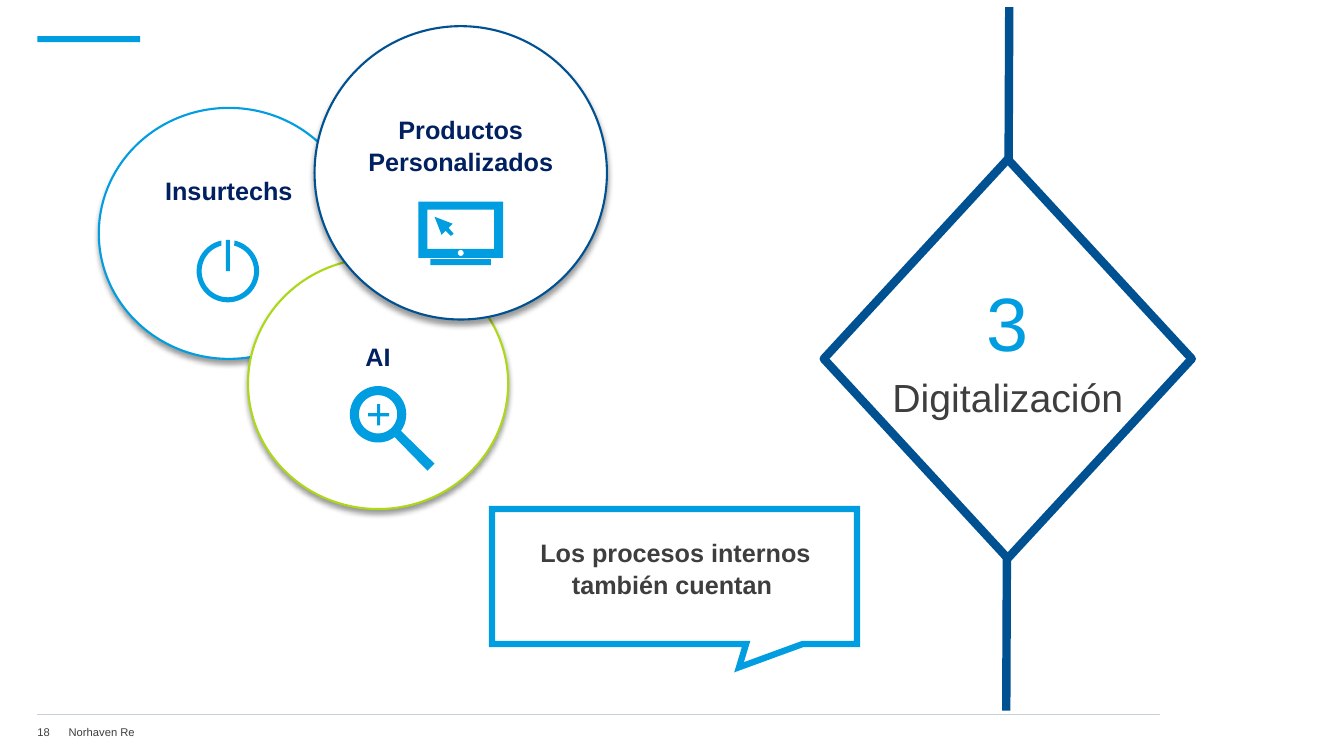
from math import cos, radians, sin

from lxml.etree import SubElement
from pptx import Presentation
from pptx.dml.color import RGBColor
from pptx.enum.shapes import MSO_CONNECTOR, MSO_SHAPE
from pptx.enum.text import MSO_ANCHOR, PP_ALIGN
from pptx.oxml.ns import qn
from pptx.util import Inches, Pt

SKY, NAVY, LIME = "009EE0", "005192", "ACD819"
INK, TEXT, RULE, WHITE = "002060", "3E3E3E", "C6D2D9", "FFFFFF"


def color(value):
    return RGBColor.from_string(value)


def arc(cx, cy, radius, start=0, end=360, steps=48):
    """Points along an arc, in inches; degrees run clockwise from the right."""
    angles = [radians(start + (end - start) * i / steps) for i in range(steps + 1)]
    return [(cx + radius * cos(a), cy + radius * sin(a)) for a in angles]


def rectangle(left, top, right, bottom):
    return [(left, top), (right, top), (right, bottom), (left, bottom)]


class SlideArtist:
    font = "Arial"
    spacing = 1.07

    def __init__(self, slide):
        self.shapes = slide.shapes

    def style(self, shape, fill=None, line=None, width=1.5, join="round"):
        if fill:
            shape.fill.solid()
            shape.fill.fore_color.rgb = color(fill)
        else:
            shape.fill.background()
        if line:
            shape.line.color.rgb = color(line)
            shape.line.width = Pt(width)
            SubElement(shape.line.fill._xPr, qn("a:" + join))
        else:
            shape.line.fill.background()
        shape.shadow.inherit = False
        return shape

    def preset(self, kind, box, **look):
        shape = self.shapes.add_shape(kind, *map(Inches, box))
        return self.style(shape, **look)

    def outline(self, *contours, **look):
        """Freeform made of closed contours; inner ones become holes."""
        builder = None
        for contour in contours:
            first, *rest = [(Inches(x), Inches(y)) for x, y in contour]
            if builder is None:
                builder = self.shapes.build_freeform(*first, scale=1.0)
            else:
                builder.move_to(*first)
            builder.add_line_segments(rest, close=True)
        return self.style(builder.convert_to_shape(), **look)

    def line(self, start, end, stroke, width):
        points = map(Inches, (*start, *end))
        connector = self.shapes.add_connector(MSO_CONNECTOR.STRAIGHT, *points)
        connector.line.color.rgb = color(stroke)
        connector.line.width = Pt(width)
        SubElement(connector._element.spPr, qn("a:effectLst"))

    def set_text(self, shape, paragraphs, insets=(0, 0, 0, 0), align=PP_ALIGN.CENTER,
                 anchor=MSO_ANCHOR.TOP, bold=False):
        """Each paragraph is (text, size, colour)."""
        frame = shape.text_frame
        frame.word_wrap = True
        frame.vertical_anchor = anchor
        (frame.margin_left, frame.margin_top,
         frame.margin_right, frame.margin_bottom) = map(Inches, insets)
        for index, (text, size, ink) in enumerate(paragraphs):
            paragraph = frame.add_paragraph() if index else frame.paragraphs[0]
            paragraph.alignment = align
            paragraph.line_spacing = self.spacing
            if index:
                paragraph.space_before = Pt(3)
            run = paragraph.add_run()
            run.text = text
            run.font.name = self.font
            run.font.size = Pt(size)
            run.font.bold = bold
            run.font.color.rgb = color(ink)

    def label(self, box, paragraphs, **layout):
        self.set_text(self.shapes.add_textbox(*map(Inches, box)), paragraphs, **layout)

    def bubble(self, box, stroke, topic, lift):
        """Shadowed circle whose topic sits above the centre by lift."""
        circle = self.preset(MSO_SHAPE.OVAL, box, fill=WHITE, line=stroke)
        effects = circle._element.spPr.find(qn("a:effectLst"))
        shadow = SubElement(effects, qn("a:outerShdw"), blurRad=str(Pt(4)),
                            dist=str(Pt(3)), dir="5400000", rotWithShape="0")
        black = SubElement(shadow, qn("a:srgbClr"), val="000000")
        SubElement(black, qn("a:alpha"), val="40000")
        self.set_text(circle, [(topic, 18, INK)], bold=True, anchor=MSO_ANCHOR.MIDDLE,
                      insets=(0.05, 0.05, 0.05, 0.05 + 2 * lift))


def main():
    deck = Presentation()
    deck.slide_width, deck.slide_height = Inches(13.33), Inches(7.5)
    artist = SlideArtist(deck.slides.add_slide(deck.slide_layouts[6]))

    # Footer and accent bar
    artist.line((0.37, 7.09), (11.51, 7.09), RULE, 0.75)
    for left, width, text in ((0.37, 0.31, "18"), (0.68, 10.78, "Norhaven Re")):
        artist.label((left, 7.14, width, 0.24), [(text, 8, TEXT)],
                     align=PP_ALIGN.LEFT, anchor=MSO_ANCHOR.MIDDLE)
    artist.preset(MSO_SHAPE.RECTANGLE, (0.37, 0.36, 1.02, 0.06), fill=SKY)

    # Chapter diamond on its vertical line
    artist.line((10.01, 0.07), (9.98, 7.05), NAVY, 6)
    artist.preset(MSO_SHAPE.FLOWCHART_DECISION, (8.17, 1.58, 3.65, 3.96),
                  fill=WHITE, line=NAVY, width=6)
    artist.label((8.82, 2.67, 2.35, 1.22),
                 [("3", 54, SKY), ("Digitalización", 28, TEXT)])

    # Topic circles
    artist.bubble((0.98, 1.07, 2.58, 2.49), SKY, "Insurtechs", 0.44)
    artist.bubble((2.46, 2.56, 2.58, 2.49), LIME, "AI", 0.28)
    artist.bubble((3.12, 0.26, 2.9, 2.91), NAVY, "Productos Personalizados", 0.28)

    # Speech callout
    callout = artist.outline(
        [(8.5, 5.05), (4.88, 5.05), (4.88, 6.39), (7.4, 6.39),
         (7.33, 6.62), (7.96, 6.39), (8.5, 6.39)],
        line=SKY, width=4.5, join="miter")
    artist.set_text(callout, [("Los procesos internos también cuentan ", 18, TEXT)],
                    insets=(0.3, 0.26, 0.28, 0.24), bold=True)

    # Screen icon: cursor, monitor, stand
    artist.outline([(4.45, 2.26), (4.49, 2.22), (4.31, 2.15), (4.38, 2.33),
                    (4.42, 2.29), (4.47, 2.34), (4.5, 2.32)], fill=SKY)
    artist.outline(rectangle(4.15, 2, 4.99, 2.56), rectangle(4.24, 2.08, 4.9, 2.47),
                   arc(4.57, 2.51, 0.03, steps=24), fill=SKY)
    artist.preset(MSO_SHAPE.RECTANGLE, (4.27, 2.57, 0.6, 0.06), fill=SKY)

    # Magnifier icon: lens with handle, plus sign
    lens = (3.75, 4.11)
    artist.outline(arc(*lens, 0.28, 54, 396) + [(4.31, 4.6), (4.24, 4.67)],
                   arc(*lens, 0.19), fill=SKY)
    artist.outline([(3.77, 4.01), (3.74, 4.01), (3.74, 4.1), (3.65, 4.1),
                    (3.65, 4.13), (3.74, 4.13), (3.74, 4.22), (3.77, 4.22),
                    (3.77, 4.13), (3.86, 4.13), (3.86, 4.1), (3.77, 4.1)], fill=SKY)

    # Power icon: bar, open ring
    button = (2.26, 2.69)
    artist.preset(MSO_SHAPE.RECTANGLE, (2.24, 2.38, 0.04, 0.31), fill=SKY)
    artist.outline(arc(*button, 0.31, -78, 258) + arc(*button, 0.26, 256, -76),
                   fill=SKY)

    deck.save("out.pptx")


if __name__ == "__main__":
    main()
